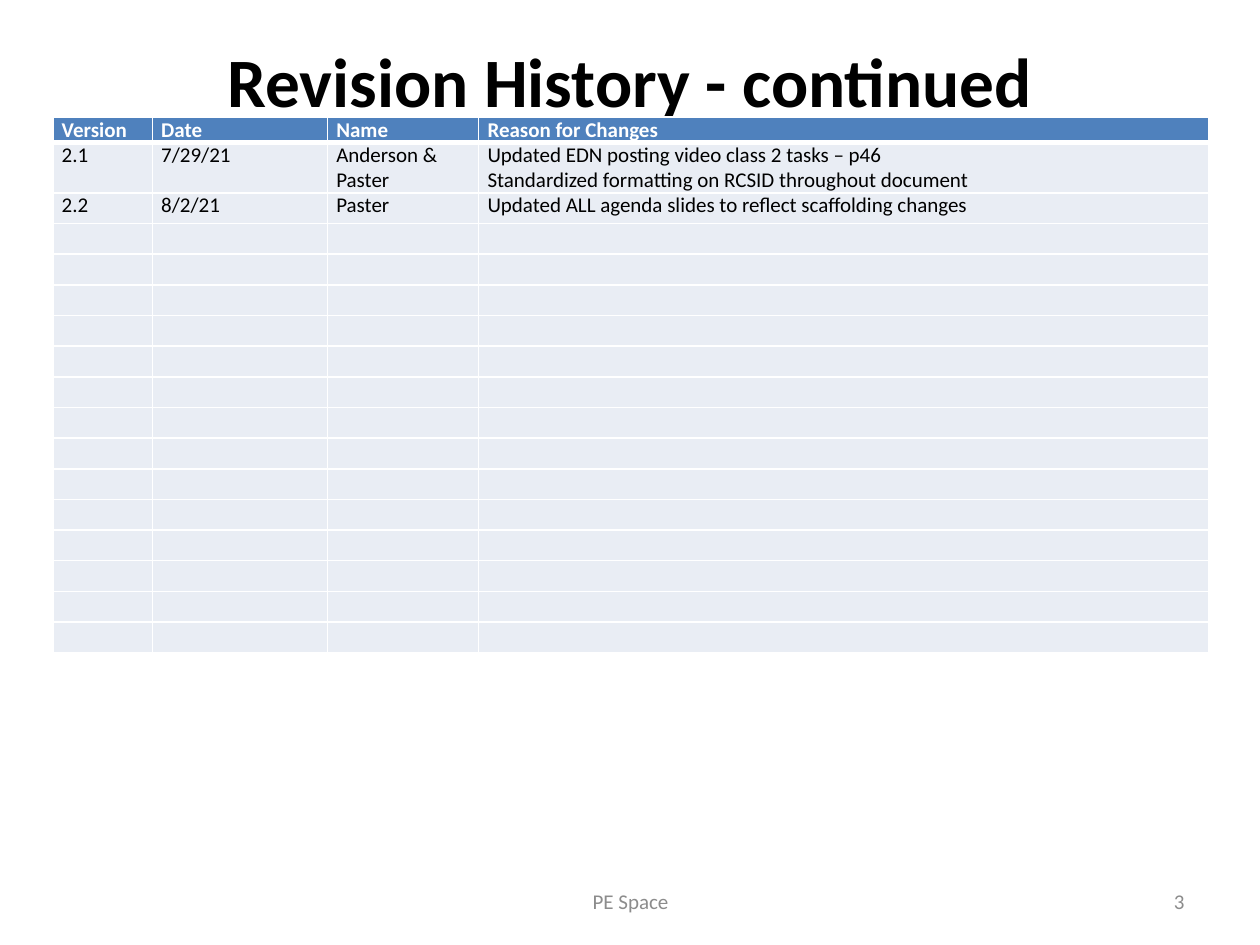
"""Build the continued revision history slide."""
import pptx
import pptx.dml.color
import pptx.enum.text
import pptx.oxml
import pptx.oxml.ns
import pptx.util

Inches = pptx.util.Inches
Pt = pptx.util.Pt
RGBColor = pptx.dml.color.RGBColor
ALIGN = pptx.enum.text.PP_ALIGN
ANCHOR = pptx.enum.text.MSO_ANCHOR

BLACK = RGBColor(0x00, 0x00, 0x00)
WHITE = RGBColor(0xFF, 0xFF, 0xFF)
GRAY = RGBColor(0x8C, 0x8C, 0x8C)
HEADER_BLUE = RGBColor(0x4F, 0x81, 0xBD)
BODY_BLUE = RGBColor(0xE9, 0xED, 0xF4)

COLUMN_WIDTHS = [0.79, 1.39, 1.2, 5.79]
HEADER_HEIGHT, FIRST_HEIGHT, TABLE_HEIGHT = 0.2, 0.4, 4.25
ROW_COUNT = 17
REVISIONS = [
    ["Version", "Date", "Name", "Reason for Changes"],
    ["2.1", "7/29/21", "Anderson & Paster",
     "Updated EDN posting video class 2 tasks – p46\n"
     "Standardized formatting on RCSID throughout document"],
    ["2.2", "8/2/21", "Paster",
     "Updated ALL agenda slides to reflect scaffolding changes"],
]


def write(frame, text, size=12, color=BLACK, bold=False, align=ALIGN.LEFT, font="Calibri"):
    frame.text = text
    for paragraph in frame.paragraphs:
        paragraph.alignment = align
        for run in paragraph.runs:
            run.font.name = font
            run.font.size = Pt(size)
            run.font.bold = bold
            run.font.color.rgb = color
        if not paragraph.runs:
            paragraph._p.get_or_add_endParaRPr().set("sz", str(size * 100))


class SlideBuilder:
    def __init__(self, slide):
        self.slide = slide
        self.border_color = WHITE

    def label(self, text, left, top, width, height, anchor=ANCHOR.MIDDLE, **style):
        frame = self.slide.shapes.add_textbox(
            Inches(left), Inches(top), Inches(width), Inches(height)).text_frame
        frame.word_wrap = True
        frame.vertical_anchor = anchor
        frame.margin_top = frame.margin_bottom = 0
        write(frame, text, **style)

    def border(self, cell, **widths):
        properties = cell._tc.get_or_add_tcPr()
        for side, points in widths.items():
            properties.append(pptx.oxml.parse_xml(
                f'<a:ln{side} {pptx.oxml.ns.nsdecls("a")} w="{Pt(points)}"><a:solidFill>'
                f'<a:srgbClr val="{self.border_color}"/></a:solidFill></a:ln{side}>'))

    def cell(self, cell, text, row):
        header = row == 0
        cell.margin_left = cell.margin_right = Inches(0.07)
        cell.margin_top = cell.margin_bottom = 0
        self.border(cell, L=1, R=1, T=3 if row == 1 else 1, B=3 if header else 1)
        cell.fill.solid()
        cell.fill.fore_color.rgb = HEADER_BLUE if header else BODY_BLUE
        write(cell.text_frame, text, color=WHITE if header else BLACK, bold=header)

    def table(self, rows, left, top, widths, heights):
        table = self.slide.shapes.add_table(
            len(heights), len(widths), Inches(left), Inches(top),
            Inches(sum(widths)), Inches(sum(heights))).table
        table.horz_banding = False
        for column, width in zip(table.columns, widths):
            column.width = Inches(width)
        for row, height in enumerate(heights):
            table.rows[row].height = Inches(height)
            texts = rows[row] if row < len(rows) else [""] * len(widths)
            for column, text in enumerate(texts):
                self.cell(table.cell(row, column), text, row)


def main():
    deck = pptx.Presentation()
    deck.slide_width, deck.slide_height = Inches(10), Inches(7.5)
    builder = SlideBuilder(deck.slides.add_slide(deck.slide_layouts[6]))
    builder.label("Revision History - continued", 0.5, 0.3, 9, 1.25, anchor=ANCHOR.TOP,
                  size=39.6, bold=True, align=ALIGN.CENTER)
    body_rows = ROW_COUNT - 2
    body_height = (TABLE_HEIGHT - HEADER_HEIGHT - FIRST_HEIGHT) / body_rows
    builder.table(REVISIONS, 0.42, 0.93, COLUMN_WIDTHS,
                  [HEADER_HEIGHT, FIRST_HEIGHT] + [body_height] * body_rows)
    builder.label("PE Space", 3.42, 6.95, 3.17, 0.4, color=GRAY, align=ALIGN.CENTER)
    builder.label("3", 7.17, 6.95, 2.33, 0.4, color=GRAY, align=ALIGN.RIGHT)
    deck.save("out.pptx")


if __name__ == "__main__":
    main()
